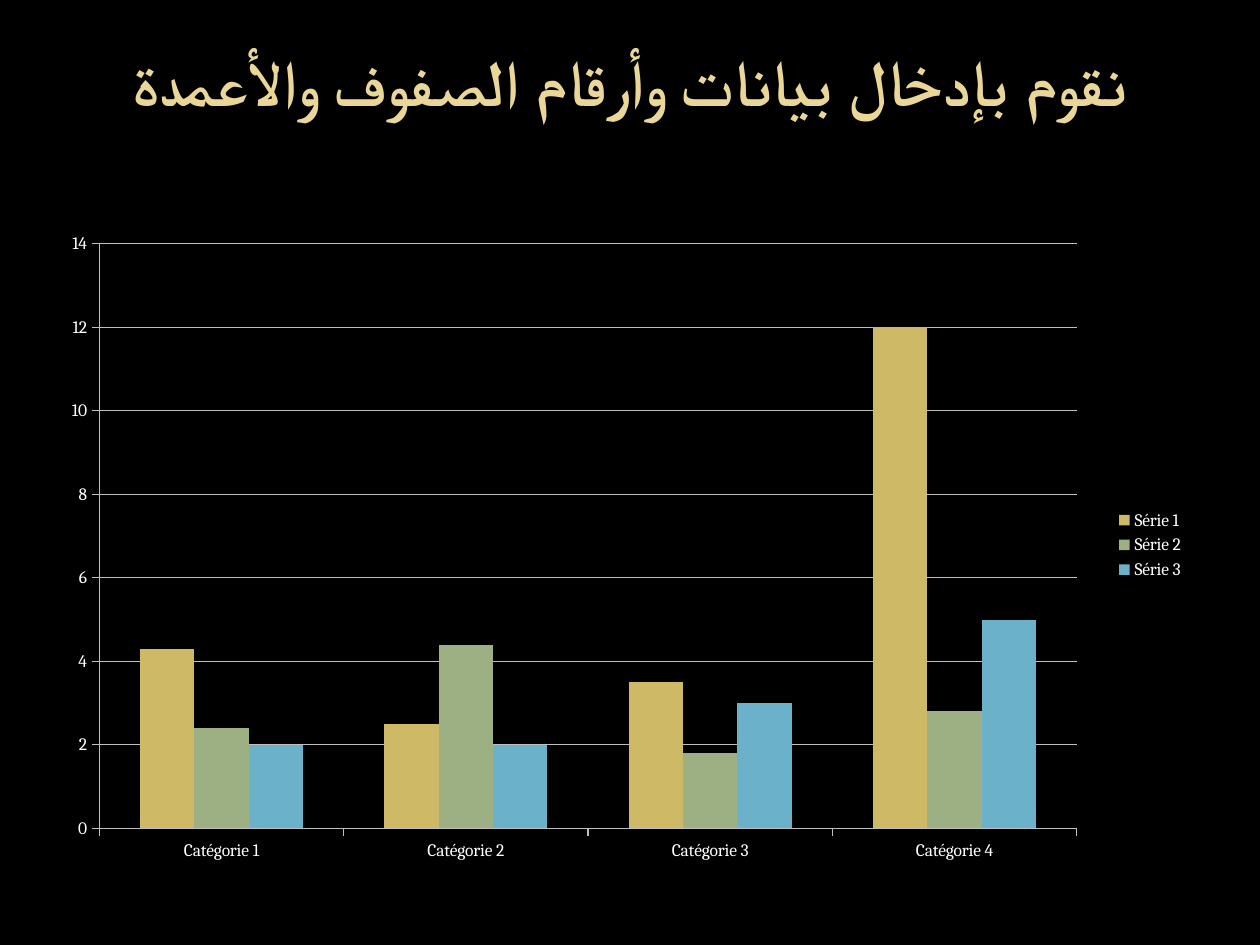
from dataclasses import dataclass

from lxml import etree
from pptx import Presentation
from pptx import util as u
from pptx.chart.data import CategoryChartData
from pptx.dml.color import RGBColor
from pptx.enum import chart as ch, text
from pptx.oxml import parse_xml
from pptx.oxml.ns import nsdecls, qn


@dataclass(frozen=True)
class Theme:
    background: str = "000000"
    title: str = "EAD696"
    label: str = "FFFFFF"
    rule: str = "BFBFBF"
    series: tuple = ("CEB966", "9CB084", "6BB1C9")
    title_font: str = "Open Sans"
    label_font: str = "Cambria"
    title_size: float = 36.9
    label_size: float = 10
    rule_width: float = 0.75


THEME = Theme()
HEADING = "نقوم بإدخال بيانات وأرقام الصفوف والأعمدة"
CATEGORIES = [f"Catégorie {number}" for number in range(1, 5)]
VALUES = {
    "Série 1": (4.3, 2.5, 3.5, 12),
    "Série 2": (2.4, 4.4, 1.8, 2.8),
    "Série 3": (2, 2, 3, 5),
}
PLOT_LAYOUT = {"x": 0.032, "y": 0.036, "w": 0.862, "h": 0.901}


def rgb(value):
    return RGBColor.from_string(value)


def place_heading(slide, box):
    heading = slide.shapes.title
    heading.left, heading.top, heading.width, heading.height = box
    frame = heading.text_frame
    frame.text = HEADING
    frame.word_wrap = True
    frame.auto_size = text.MSO_AUTO_SIZE.NONE
    frame.vertical_anchor = text.MSO_ANCHOR.MIDDLE
    frame.margin_bottom = u.Inches(0.62)
    paragraph = frame.paragraphs[0]
    paragraph.alignment = text.PP_ALIGN.CENTER
    paragraph.runs[0].font.language_id = None
    font = paragraph.runs[0].font
    font.name = THEME.title_font
    font.size = u.Pt(THEME.title_size)
    font.bold = True
    font.color.rgb = rgb(THEME.title)
    run_properties = paragraph.runs[0]._r.get_or_add_rPr()
    complex_script = etree.SubElement(run_properties, qn("a:cs"))
    complex_script.set("typeface", THEME.title_font)
    paragraph._p.get_or_add_pPr().set("rtl", "1")


def style_rule(line):
    line.color.rgb = rgb(THEME.rule)
    line.width = u.Pt(THEME.rule_width)


def set_plot_layout(chart):
    edges = "".join(f'<c:{axis}Mode val="edge"/>' for axis in "xy")
    extents = "".join(f'<c:{key} val="{val}"/>' for key, val in PLOT_LAYOUT.items())
    layout = parse_xml(
        f'<c:layout {nsdecls("c")}><c:manualLayout><c:layoutTarget val="inner"/>'
        f"{edges}{extents}</c:manualLayout></c:layout>"
    )
    plot_area = chart._chartSpace.chart.plotArea
    for automatic in plot_area.findall(qn("c:layout")):
        plot_area.remove(automatic)
    plot_area.insert(0, layout)


def place_columns(slide, box):
    data = CategoryChartData()
    data.categories = CATEGORIES
    for name, values in VALUES.items():
        data.add_series(name, values)
    chart = slide.shapes.add_chart(
        ch.XL_CHART_TYPE.COLUMN_CLUSTERED, *box, data
    ).chart

    chart.has_title = False
    chart.font.name = THEME.label_font
    chart.font.size = u.Pt(THEME.label_size)
    chart.font.color.rgb = rgb(THEME.label)
    chart.has_legend = True
    chart.legend.position = ch.XL_LEGEND_POSITION.RIGHT
    chart.legend.include_in_layout = False

    columns = chart.plots[0]
    columns.gap_width = 150
    columns.overlap = 0
    columns.vary_by_categories = False
    for series, color in zip(columns.series, THEME.series):
        series.format.fill.solid()
        series.format.fill.fore_color.rgb = rgb(color)
        series.invert_if_negative = False

    for axis in (chart.category_axis, chart.value_axis):
        axis.major_tick_mark = ch.XL_TICK_MARK.OUTSIDE
        axis.minor_tick_mark = ch.XL_TICK_MARK.NONE
        style_rule(axis.format.line)
    scale = chart.value_axis
    scale.minimum_scale, scale.maximum_scale, scale.major_unit = 0, 14, 2
    scale.has_major_gridlines = True
    style_rule(scale.major_gridlines.format.line)
    set_plot_layout(chart)


def main():
    deck = Presentation()
    deck.slide_width, deck.slide_height = u.Inches(10), u.Inches(7.5)
    slide = deck.slides.add_slide(deck.slide_layouts[5])
    slide.background.fill.solid()
    slide.background.fill.fore_color.rgb = rgb(THEME.background)
    left, width = u.Inches(0.5), u.Inches(9)
    place_heading(slide, (left, u.Inches(0.3), width, u.Inches(1.25)))
    place_columns(slide, (left, u.Inches(1.75), width, u.Inches(5.15)))
    deck.save("out.pptx")


if __name__ == "__main__":
    main()
